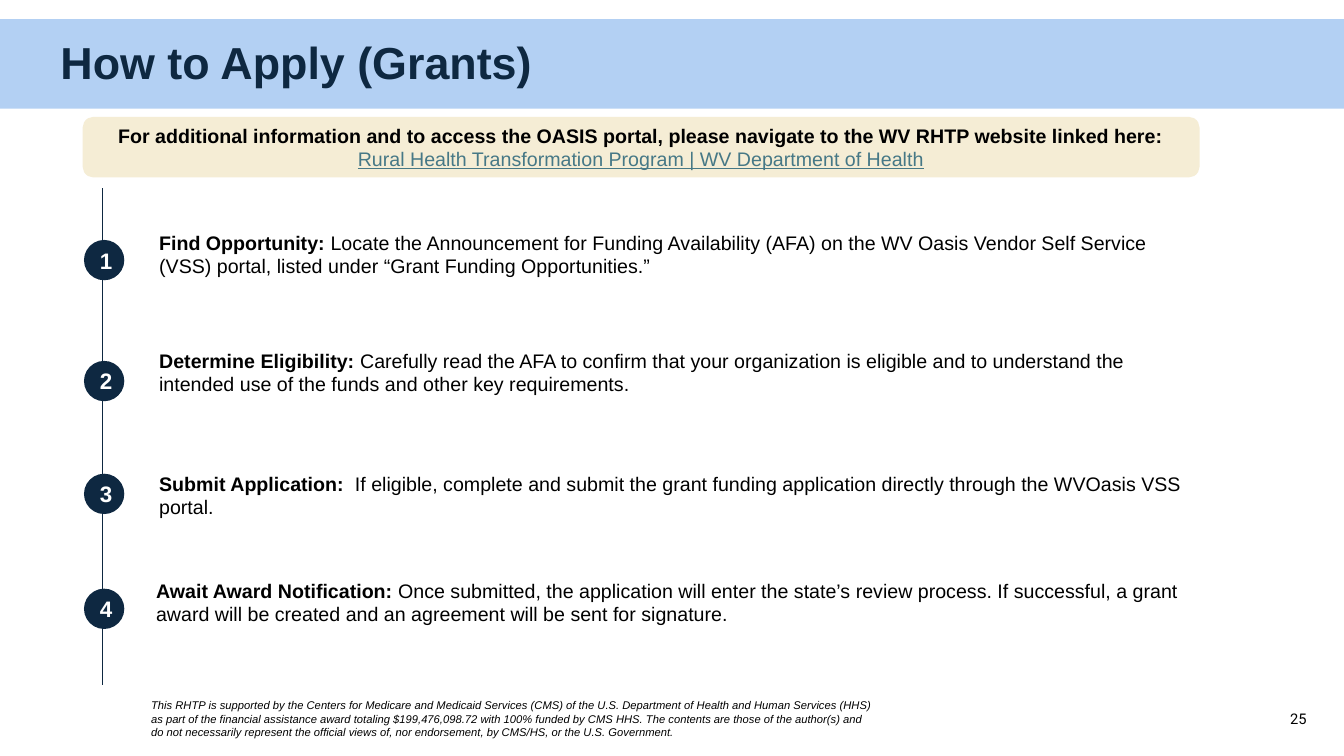
from lxml import etree
from pptx import Presentation
from pptx.dml.color import RGBColor
from pptx.enum.shapes import MSO_CONNECTOR, MSO_SHAPE
from pptx.enum.text import MSO_ANCHOR, MSO_AUTO_SIZE, PP_ALIGN
from pptx.oxml.ns import qn
from pptx.util import Pt

STRAIGHT = MSO_CONNECTOR.STRAIGHT
RECTANGLE, ROUNDED, OVAL = MSO_SHAPE.RECTANGLE, MSO_SHAPE.ROUNDED_RECTANGLE, MSO_SHAPE.OVAL
TOP, MIDDLE = MSO_ANCHOR.TOP, MSO_ANCHOR.MIDDLE
LEFT, CENTER, RIGHT = PP_ALIGN.LEFT, PP_ALIGN.CENTER, PP_ALIGN.RIGHT
NO_AUTOFIT = MSO_AUTO_SIZE.NONE

COLORS = {
    "navy": "0E2841",
    "band": "B3D0F3",
    "cream": "F5EDD5",
    "link": "467886",
    "black": "000000",
    "white": "FFFFFF",
}

CIRCLE_LEFT, CIRCLE_SIZE = 60, 28.8
STEP_WIDTH, STEP_HEIGHT = 751.7, 41

# Circle top, text left, text top, heading, explanation
STEPS = [
    (171.4, 106.6, 161.3, "Find Opportunity: ",
     "Locate the Announcement for Funding Availability (AFA) on the WV Oasis Vendor Self "
     "Service (VSS) portal, listed under “Grant Funding Opportunities.”"),
    (257.8, 106.6, 245.5, "Determine Eligibility: ",
     "Carefully read the AFA to confirm that your organization is eligible and to understand "
     "the intended use of the funds and other key requirements."),
    (338.4, 106.6, 333.4, "Submit Application:  ",
     "If eligible, complete and submit the grant funding application directly through the "
     "WVOasis VSS portal."),
    (420.5, 104.4, 409.7, "Await Award Notification: ",
     "Once submitted, the application will enter the state’s review process. If successful, "
     "a grant award will be created and an agreement will be sent for signature."),
]

DISCLAIMER = (
    "This RHTP is supported by the Centers for Medicare and Medicaid Services (CMS) of the U.S. "
    "Department of Health and Human Services (HHS) as part of the financial assistance award "
    "totaling $199,476,098.72 with 100% funded by CMS HHS. The contents are those of the "
    "author(s) and do not necessarily represent the official views of, nor endorsement, by "
    "CMS/HS, or the U.S. Government."
)


def rgb(color):
    return RGBColor.from_string(COLORS[color])


def write(shape, runs, size, color="black", font="Arial", align=LEFT, anchor=TOP):
    """Fill a shape with one paragraph; runs are (text, format values) pairs."""
    frame = shape.text_frame
    frame.word_wrap = True
    frame.auto_size = NO_AUTOFIT
    frame.vertical_anchor = anchor
    paragraph = frame.paragraphs[0]
    paragraph.alignment = align
    for text, values in runs:
        run = paragraph.add_run()
        run.text = text
        run.font.color.rgb = rgb(values.get("color", color))
        formats = {"name": font, "size": Pt(size), "bold": False, **values}
        formats.pop("color", None)
        for name, value in formats.items():
            setattr(run.font, name, value)
    return paragraph


def add_text(slide, box, runs, size, **options):
    write(slide.shapes.add_textbox(*map(Pt, box)), runs, size, **options)


def add_filled(slide, kind, box, color):
    shape = slide.shapes.add_shape(kind, *map(Pt, box))
    shape.shadow.inherit = False
    shape.fill.solid()
    shape.fill.fore_color.rgb = rgb(color)
    shape.line.fill.background()
    return shape


def add_title(slide):
    title = slide.shapes.title
    title.left, title.top, title.width, title.height = map(Pt, (36, 13.7, 908, 64.8))
    heading = write(title, [("How to Apply (Grants)", {"bold": True})], 32,
                    color="navy", anchor=MIDDLE)
    heading.line_spacing = 0.9
    band = add_filled(slide, RECTANGLE, (0, 13.7, 960, 64), "band")
    title.element.addprevious(band.element)


def add_portal_notice(slide):
    notice = add_filled(slide, ROUNDED, (59.8, 84.2, 796.3, 41.8), "cream")
    notice.adjustments[0] = 0.167
    notice.line.color.rgb = rgb("cream")
    notice.line.width = Pt(1.5)
    write(notice, [
        ("For additional information and to access the OASIS portal, please navigate to the "
         "WV RHTP website linked here: ", {"bold": True}),
        ("Rural Health Transformation Program | WV Department of Health",
         {"color": "link", "underline": True}),
    ], 14, align=CENTER, anchor=MIDDLE)


def add_timeline(slide):
    timeline = slide.shapes.add_connector(STRAIGHT, *map(Pt, (73.4, 134.6, 73.4, 489.6)))
    timeline.line.color.rgb = rgb("navy")
    timeline.line.width = Pt(1)
    etree.SubElement(timeline.element.spPr, qn("a:effectLst"))


def add_step(slide, number, circle_top, text_left, text_top, heading, explanation):
    circle = add_filled(slide, OVAL, (CIRCLE_LEFT, circle_top, CIRCLE_SIZE, CIRCLE_SIZE), "navy")
    write(circle, [(str(number), {"bold": True})], 16,
          color="white", align=CENTER, anchor=MIDDLE)
    add_text(slide, (text_left, text_top, STEP_WIDTH, STEP_HEIGHT),
             [(heading, {"bold": True}), (explanation, {})], 14)


def main():
    deck = Presentation()
    deck.slide_width, deck.slide_height = Pt(960), Pt(540)
    slide = deck.slides.add_slide(deck.slide_layouts[5])

    add_title(slide)
    add_portal_notice(slide)
    add_timeline(slide)
    for number, step in enumerate(STEPS, start=1):
        add_step(slide, number, *step)
    add_text(slide, (100.8, 495.4, 534.2, 36), [(DISCLAIMER, {"italic": True})], 8)
    add_text(slide, (716.4, 499, 224, 28.8), [("25", {})], 10.5,
             font="Roboto", align=RIGHT, anchor=MIDDLE)

    deck.save("out.pptx")


if __name__ == "__main__":
    main()
